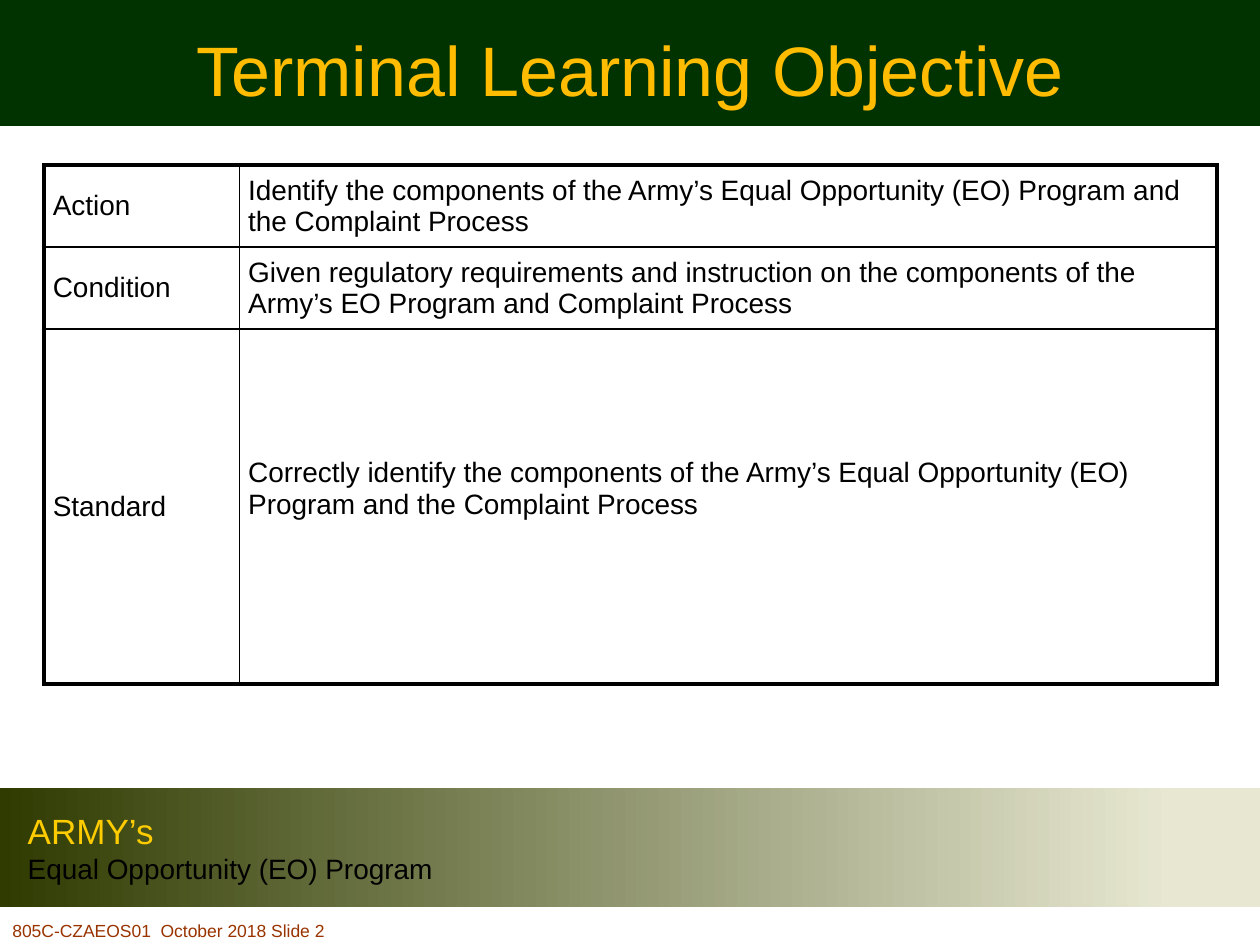
import dataclasses

import lxml.etree
import pptx
import pptx.dml.color
import pptx.enum.shapes
import pptx.enum.text
import pptx.oxml.ns
import pptx.util

Inches = pptx.util.Inches
Pt = pptx.util.Pt
MIDDLE = pptx.enum.text.MSO_ANCHOR.MIDDLE
LEFT = pptx.enum.text.PP_ALIGN.LEFT
CENTER = pptx.enum.text.PP_ALIGN.CENTER
FONT = "Arial"
BLACK = "000000"
OUTER_LINE = 2.25
INNER_LINE = 1


@dataclasses.dataclass
class Objective:
    label: str
    description: str
    height: float
    top_margin: float = 0.04
    bottom_margin: float = 0.04


OBJECTIVES = [
    Objective(
        "Action",
        "Identify the components of the Army’s Equal Opportunity (EO) Program and the Complaint Process",
        0.65,
    ),
    Objective(
        "Condition",
        "Given regulatory requirements and instruction on the components of the Army’s EO Program and Complaint Process",
        0.65,
    ),
    Objective(
        "Standard",
        "Correctly identify the components of the Army’s Equal Opportunity (EO) Program and the Complaint Process",
        2.82,
        top_margin=0,
        bottom_margin=0.28,
    ),
]
COLUMN_WIDTHS = [1.55, 7.76]


def rgb(value: str) -> pptx.dml.color.RGBColor:
    return pptx.dml.color.RGBColor.from_string(value)


def write(paragraph, text: str, size: float, color: str, alignment=LEFT) -> None:
    paragraph.text = text
    paragraph.alignment = alignment
    paragraph.font.name = FONT
    paragraph.font.size = Pt(size)
    paragraph.font.color.rgb = rgb(color)


def add_band(slide, top: float, height: float):
    band = slide.shapes.add_shape(
        pptx.enum.shapes.MSO_SHAPE.RECTANGLE, 0, Inches(top), Inches(10), Inches(height)
    )
    band.shadow.inherit = False
    band.line.fill.background()
    return band


def add_header_band(slide) -> None:
    band = add_band(slide, 0, 1)
    band.fill.solid()
    band.fill.fore_color.rgb = rgb("003300")


def add_program_band(slide) -> None:
    band = add_band(slide, 6.25, 0.95)
    band.fill.gradient()
    band.fill.gradient_angle = 0
    for stop, position, color in zip(
        band.fill.gradient_stops, (0, 0.93), ("2F3B01", "E8E8D2")
    ):
        stop.position = position
        stop.color.rgb = rgb(color)
    frame = band.text_frame
    frame.vertical_anchor = MIDDLE
    frame.margin_left = Inches(0.22)
    write(frame.paragraphs[0], "ARMY’s", 20, "FFCC00")
    write(frame.add_paragraph(), "Equal Opportunity (EO) Program", 16, BLACK)


def place_title(slide) -> None:
    title = slide.shapes.title
    title.left, title.top = Inches(0.75), Inches(-0.08)
    title.width, title.height = Inches(8.5), Inches(1.25)
    title.text_frame.vertical_anchor = MIDDLE
    write(title.text_frame.paragraphs[0], "Terminal Learning Objective", 40, "FFBC01", CENTER)
    title.element.getparent().append(title.element)


def add_border(cell, side: str, width: float) -> None:
    qn = pptx.oxml.ns.qn
    properties = cell._tc.get_or_add_tcPr()
    line = lxml.etree.SubElement(properties, qn(f"a:ln{side}"), w=str(Pt(width)))
    fill = lxml.etree.SubElement(line, qn("a:solidFill"))
    lxml.etree.SubElement(fill, qn("a:srgbClr"), val=BLACK)


def format_cell(cell, text: str, outer_sides: str) -> None:
    cell.vertical_anchor = MIDDLE
    cell.margin_left = cell.margin_right = Inches(0.07)
    cell.margin_top = cell.margin_bottom = Inches(0.04)
    write(cell.text_frame.paragraphs[0], text, 16, BLACK)
    for side in "LRTB":
        add_border(cell, side, OUTER_LINE if side in outer_sides else INNER_LINE)
    cell.fill.background()


def add_objective_table(slide) -> None:
    table = slide.shapes.add_table(
        len(OBJECTIVES),
        len(COLUMN_WIDTHS),
        Inches(0.35),
        Inches(1.31),
        Inches(sum(COLUMN_WIDTHS)),
        Inches(sum(objective.height for objective in OBJECTIVES)),
    ).table
    table.first_row = table.horz_banding = False
    for column, width in zip(table.columns, COLUMN_WIDTHS):
        column.width = Inches(width)
    last_row = len(OBJECTIVES) - 1
    for index, objective in enumerate(OBJECTIVES):
        table.rows[index].height = Inches(objective.height)
        edges = ("T" if index == 0 else "") + ("B" if index == last_row else "")
        format_cell(table.cell(index, 0), objective.label, "L" + edges)
        description = table.cell(index, 1)
        format_cell(description, objective.description, "R" + edges)
        description.margin_top = Inches(objective.top_margin)
        description.margin_bottom = Inches(objective.bottom_margin)


def add_footer(slide) -> None:
    footer = slide.shapes.add_textbox(0, Inches(7.25), Inches(3.9), Inches(0.25))
    footer.text_frame.word_wrap = True
    write(footer.text_frame.paragraphs[0], "805C-CZAEOS01  October 2018 Slide 2", 10, "993300")


def main() -> None:
    presentation = pptx.Presentation()
    presentation.slide_width = Inches(10)
    presentation.slide_height = Inches(7.5)
    slide = presentation.slides.add_slide(presentation.slide_layouts[5])
    add_header_band(slide)
    add_program_band(slide)
    place_title(slide)
    add_objective_table(slide)
    add_footer(slide)
    presentation.save("out.pptx")


if __name__ == "__main__":
    main()
